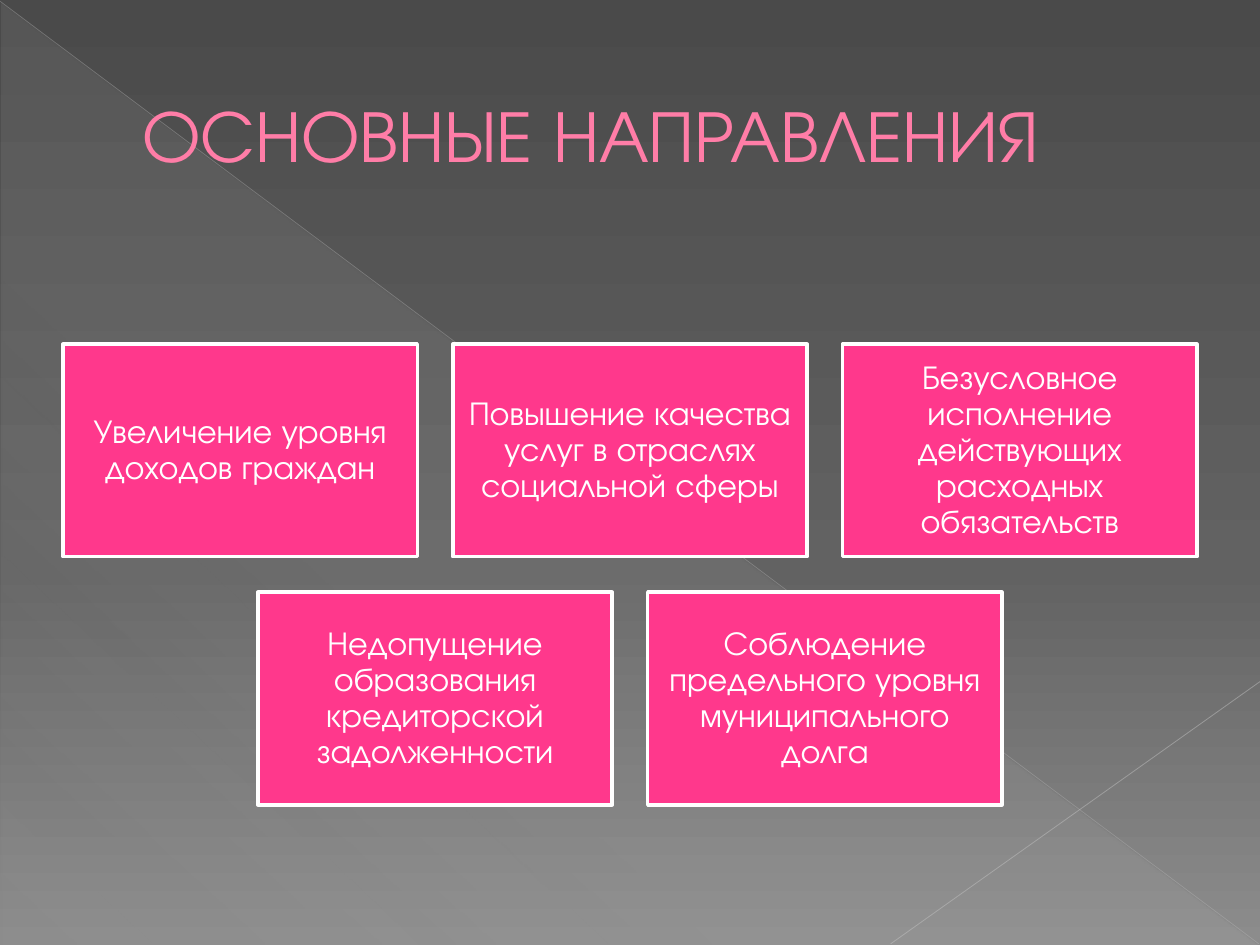
from dataclasses import dataclass

from lxml.etree import SubElement
from pptx import Presentation
from pptx.dml.color import RGBColor
from pptx.enum.shapes import MSO_CONNECTOR, MSO_SHAPE
from pptx.enum.text import MSO_ANCHOR, MSO_AUTO_SIZE, PP_ALIGN
from pptx.oxml.ns import qn
from pptx.util import Pt


@dataclass(frozen=True)
class Theme:
    font: str = "TeX Gyre Adventor"
    title_size: float = 42
    box_size: float = 19
    title: str = "FF7DA7"
    title_outline: str = "B12761"
    box: str = "FF388C"
    white: str = "FFFFFF"
    long_line: str = "BFBFBF"
    short_line: str = "C6C6C6"
    # Gradient stops: position, colour, opacity, all but colour in percent
    background: tuple = ((0, "4A4A4A", 100), (60, "626262", 100), (100, "8C8C8C", 100))
    triangle: tuple = ((0, "D2D2D2", 10), (70, "D2D2D2", 8), (100, "D2D2D2", 1))


THEME = Theme()
SLIDE_WIDTH, SLIDE_HEIGHT = 720, 540
BOX_WIDTH, BOX_HEIGHT, GAP = 202.5, 121.5, 20.25
BOXES_TOP = 196.7
INSET = 5.7

TITLE = "ОСНОВНЫЕ НАПРАВЛЕНИЯ"
ROWS = (
    (
        "Увеличение уровня доходов граждан",
        "Повышение качества услуг в отраслях социальной сферы",
        "Безусловное исполнение действующих расходных обязательств",
    ),
    (
        "Недопущение образования кредиторской задолженности",
        "Соблюдение предельного уровня муниципального долга",
    ),
)


def set_opacity(color_element, percent):
    SubElement(color_element, qn("a:alpha"), val=str(percent * 1000))


def set_gradient(owner, fill, stops, angle):
    """Fill with stops along an angle measured clockwise; owner holds the fill's XML."""
    fill.gradient()
    fill.gradient_angle = 360 - angle
    stop_list = next(owner.iter(qn("a:gsLst")))
    for old_stop in list(stop_list):
        stop_list.remove(old_stop)
    for position, color, opacity in stops:
        stop = SubElement(stop_list, qn("a:gs"), pos=str(position * 1000))
        color_element = SubElement(stop, qn("a:srgbClr"), val=color)
        if opacity < 100:
            set_opacity(color_element, opacity)


def write_text(frame, text, *, size, color, align, spacing=1.0):
    """Write one middle-anchored paragraph and return its paragraph and span."""
    frame.word_wrap = True
    frame.auto_size = MSO_AUTO_SIZE.NONE
    frame.vertical_anchor = MSO_ANCHOR.MIDDLE
    para = frame.paragraphs[0]
    para.alignment = align
    para.line_spacing = spacing
    span = para.add_run()
    span.text = text
    span.font.name = THEME.font
    span.font.size = Pt(size)
    span.font.color.rgb = RGBColor.from_string(color)
    return para, span


def add_triangle(page):
    triangle = page.shapes.add_shape(
        MSO_SHAPE.RIGHT_TRIANGLE, Pt(0.7), Pt(1.4), Pt(718.6), Pt(538.6)
    )
    triangle.shadow.inherit = False
    triangle.line.fill.background()
    set_gradient(triangle.element, triangle.fill, THEME.triangle, 133)


def add_line(page, start, end, *, color, width, opacity):
    line = page.shapes.add_connector(
        MSO_CONNECTOR.STRAIGHT, *(Pt(value) for value in (*start, *end))
    )
    line.line.width = Pt(width)
    line.line.color.rgb = RGBColor.from_string(color)
    set_opacity(next(line.element.iter(qn("a:srgbClr"))), opacity)
    SubElement(line.element.spPr, qn("a:effectLst"))


def format_title(page):
    title = page.shapes.title
    title.left, title.top, title.width, title.height = Pt(36), Pt(21), Pt(648), Pt(110)
    para, span = write_text(
        title.text_frame, TITLE,
        size=THEME.title_size, color=THEME.title, align=PP_ALIGN.LEFT,
    )
    properties = para._p.get_or_add_pPr()
    properties.set("marL", str(Pt(38)))
    properties.set("indent", "0")
    # The outline has to come before the text fill
    outline = SubElement(span.font._element, qn("a:ln"), w=str(Pt(0.5)))
    fill = SubElement(outline, qn("a:solidFill"))
    SubElement(fill, qn("a:srgbClr"), val=THEME.title_outline)
    span.font._element.insert(0, outline)
    # Bring the title in front of the decoration
    page.shapes.element.append(title.element)


def add_box(page, text, left, top):
    box = page.shapes.add_shape(
        MSO_SHAPE.RECTANGLE, Pt(left), Pt(top), Pt(BOX_WIDTH), Pt(BOX_HEIGHT)
    )
    box.shadow.inherit = False
    box.fill.solid()
    box.fill.fore_color.rgb = RGBColor.from_string(THEME.box)
    box.line.color.rgb = RGBColor.from_string(THEME.white)
    box.line.width = Pt(2)
    frame = box.text_frame
    frame.margin_left = frame.margin_right = Pt(INSET)
    frame.margin_top = frame.margin_bottom = Pt(INSET)
    write_text(
        frame, text,
        size=THEME.box_size, color=THEME.white, align=PP_ALIGN.CENTER, spacing=0.9,
    )


def add_box_rows(page):
    """Lay out the rows of boxes, each row centred on the slide."""
    for row, texts in enumerate(ROWS):
        row_width = len(texts) * (BOX_WIDTH + GAP) - GAP
        left = (SLIDE_WIDTH - row_width) / 2
        top = BOXES_TOP + row * (BOX_HEIGHT + GAP)
        for column, text in enumerate(texts):
            add_box(page, text, left + column * (BOX_WIDTH + GAP), top)


def main():
    deck = Presentation()
    deck.slide_width, deck.slide_height = Pt(SLIDE_WIDTH), Pt(SLIDE_HEIGHT)
    page = deck.slides.add_slide(deck.slide_layouts.get_by_name("Title Only"))
    set_gradient(page.element, page.background.fill, THEME.background, 90)
    add_triangle(page)
    add_line(page, (0, 0.7), (719.3, 539.3), color=THEME.long_line, width=0.39, opacity=35)
    add_line(page, (720, 389.5), (509, 539.3), color=THEME.short_line, width=0.47, opacity=45)
    format_title(page)
    add_box_rows(page)
    deck.save("out.pptx")


if __name__ == "__main__":
    main()
